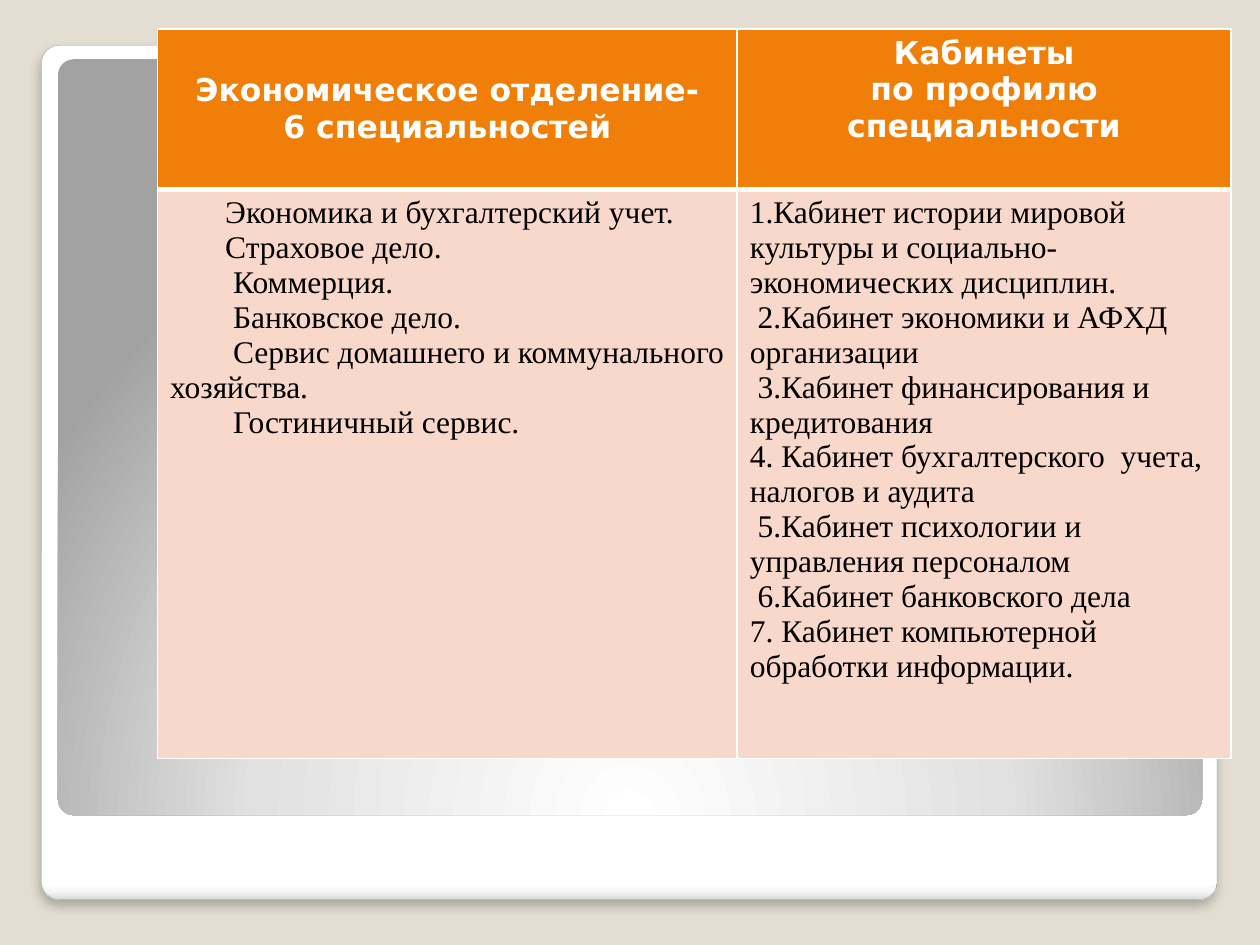
from lxml.etree import SubElement
from pptx import Presentation
from pptx.dml.color import RGBColor
from pptx.enum.shapes import MSO_SHAPE
from pptx.enum.text import MSO_ANCHOR, PP_ALIGN
from pptx.oxml import parse_xml
from pptx.oxml.ns import nsdecls, qn
from pptx.util import Emu, Inches, Pt

HUES = {"back": "E3DED1", "edge": "A4A4A4", "head": "F07F09",
        "body": "F9D8CC", "white": "FFFFFF", "text": "000000"}
FRAME = [(0, "FFFFFF"), (98, "FFFFFF"), (99, "F7F7F7"), (100, "DADADA")]
PANEL = [(0, "FFFFFF"), (55, "E1E1E1"), (100, "A2A2A2")]
DOWN = '<a:lin ang="5400000" scaled="0"/>'
GLOW = ('<a:path path="circle"><a:fillToRect l="50000" t="175000" '
        'r="50000" b="-75000"/></a:path>')

# Each body line is (width of its first-line indent in spaces, text).
HEADS = [["Экономическое отделение-", "6 специальностей"],
         ["Кабинеты", "по профилю специальности"]]
COURSES = [(7, "Экономика и бухгалтерский учет."),
           (7, "Страховое дело."),
           (8, "Коммерция."),
           (8, "Банковское дело."),
           (8, "Сервис домашнего и коммунального хозяйства."),
           (8, "Гостиничный сервис.")]
ROOMS = [(0, "1.Кабинет истории мировой культуры и социально-экономических дисциплин."),
         (1, "2.Кабинет экономики и АФХД организации"),
         (1, "3.Кабинет финансирования и кредитования"),
         (0, "4. Кабинет бухгалтерского  учета, налогов и аудита"),
         (1, "5.Кабинет психологии и управления персоналом"),
         (1, "6.Кабинет банковского дела"),
         (0, "7. Кабинет компьютерной обработки информации.")]
SIZE = 18
SPACE = Pt(SIZE / 4)


def tint(name):
    return RGBColor.from_string(HUES[name])


def add_plate(slide, box, stops, course):
    """Rounded plate with a gradient that follows the given course."""
    plate = slide.shapes.add_shape(MSO_SHAPE.ROUNDED_RECTANGLE, *map(Inches, box))
    plate.adjustments[0] = 0.021
    plate.shadow.inherit = False
    plate.line.fill.background()
    marks = "".join(f'<a:gs pos="{pos * 1000}"><a:srgbClr val="{hue}"/></a:gs>'
                    for pos, hue in stops)
    fill = parse_xml(f'<a:gradFill {nsdecls("a")} rotWithShape="1">'
                     f'<a:gsLst>{marks}</a:gsLst>{course}</a:gradFill>')
    plate.element.spPr.find(qn("a:prstGeom")).addnext(fill)
    return plate


def add_frame(slide, box):
    frame = add_plate(slide, box, FRAME, DOWN)
    frame.line.color.rgb = tint("edge")
    frame.line.width = Pt(0.16)
    glow = SubElement(frame.element.spPr.find(qn("a:effectLst")), qn("a:outerShdw"),
                      blurRad=str(Pt(6)), dist=str(Pt(4)), dir="5400000",
                      algn="t", rotWithShape="0")
    hue = SubElement(glow, qn("a:srgbClr"), val=HUES["text"])
    SubElement(hue, qn("a:alpha"), val="25000")


def set_edges(cell, **thick):
    """Draw white cell borders, 1 pt unless a side is given its own width."""
    props = cell._tc.get_or_add_tcPr()
    for spot, side in enumerate("LRTB"):
        width = Pt(thick.get(side, 1))
        props.insert(spot, parse_xml(
            f'<a:ln{side} {nsdecls("a")} w="{width}"><a:solidFill>'
            f'<a:srgbClr val="{HUES["white"]}"/></a:solidFill></a:ln{side}>'))


def fill_cell(cell, lines, fill, font, hue, bold):
    cell.fill.solid()
    cell.fill.fore_color.rgb = tint(fill)
    frame = cell.text_frame
    frame.text = "\n".join(lines)
    for para in frame.paragraphs:
        para.font.name = font
        para.font.size = Pt(SIZE)
        para.font.bold = bold
        para.font.color.rgb = tint(hue)


def fill_head(cell, lines):
    fill_cell(cell, lines, "head", "DejaVu Sans", "white", True)
    set_edges(cell, B=3)
    for para in cell.text_frame.paragraphs:
        para.alignment = PP_ALIGN.CENTER


def fill_body(cell, items):
    fill_cell(cell, [text for _, text in items], "body",
              "Times New Roman", "text", False)
    set_edges(cell, T=3)
    for para, (gap, _) in zip(cell.text_frame.paragraphs, items):
        props = para._p.get_or_add_pPr()
        props.set("marL", "0")
        props.set("indent", str(Emu(gap * SPACE)))


def add_grid(slide, box, cols, rows):
    """Table whose columns and rows are shares of its box."""
    left, top, width, height = map(Inches, box)
    grid = slide.shapes.add_table(2, 2, left, top, width, height).table
    for col, share in zip(grid.columns, cols):
        col.width = int(width * share)
    for row, share in zip(grid.rows, rows):
        row.height = int(height * share)
    for col, (head, items) in enumerate(zip(HEADS, (COURSES, ROOMS))):
        fill_head(grid.cell(0, col), head)
        fill_body(grid.cell(1, col), items)
    grid.cell(0, 0).vertical_anchor = MSO_ANCHOR.MIDDLE


def main():
    deck = Presentation()
    deck.slide_width, deck.slide_height = Inches(10), Inches(7.5)
    slide = deck.slides.add_slide(deck.slide_layouts[6])
    slide.background.fill.solid()
    slide.background.fill.fore_color.rgb = tint("back")
    add_frame(slide, (0.33, 0.36, 9.33, 6.78))
    add_plate(slide, (0.46, 0.47, 9.08, 6), PANEL, GLOW)
    add_grid(slide, (1.25, 0.23, 8.52, 5.79), (0.54, 0.46), (0.22, 0.78))
    deck.save("out.pptx")


if __name__ == "__main__":
    main()
